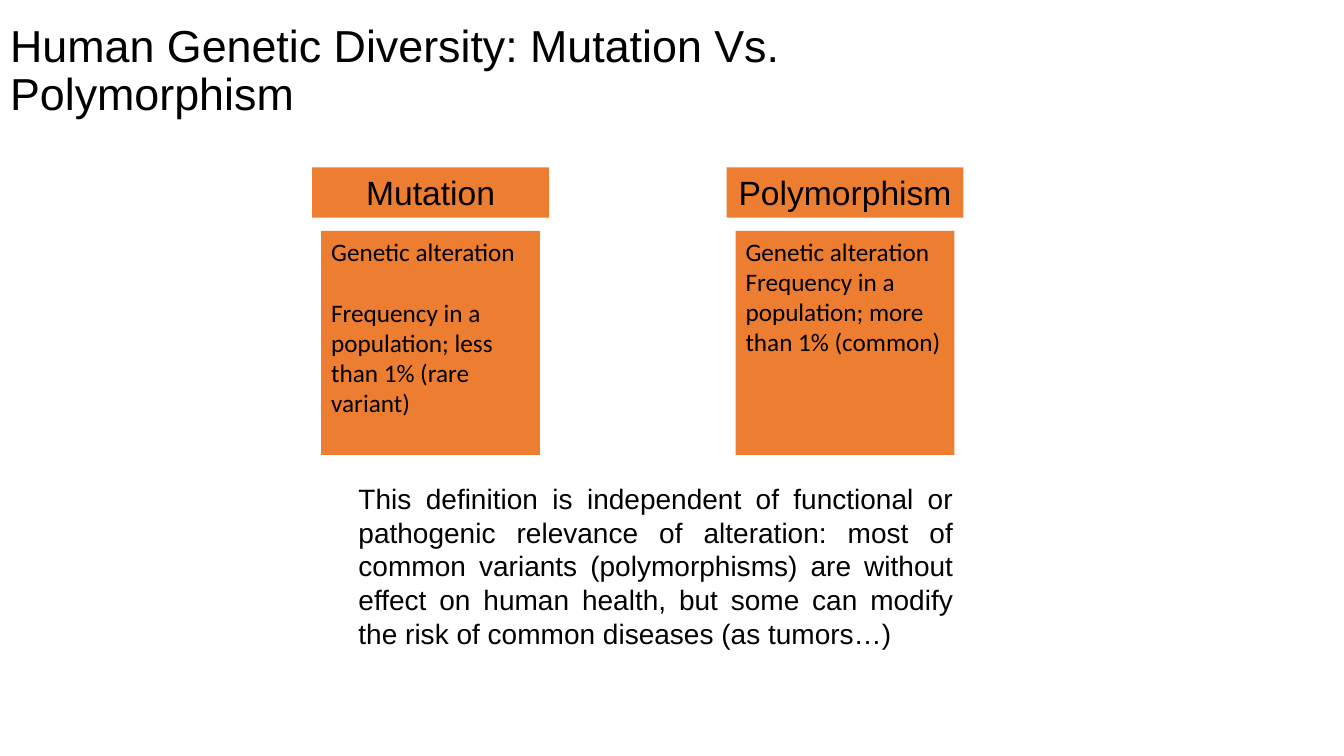
from pptx import Presentation
from pptx.dml.color import RGBColor
from pptx.enum.shapes import MSO_SHAPE
from pptx.enum.text import MSO_ANCHOR, MSO_AUTO_SIZE, PP_ALIGN
from pptx.util import Pt

ORANGE = RGBColor(0xED, 0x7D, 0x31)
BLACK = RGBColor(0, 0, 0)


def write(sp, *lines, size, font="Arial", align=PP_ALIGN.LEFT,
          anchor=MSO_ANCHOR.TOP, spacing=None, gap=0):
    """Fill a shape with one paragraph per line, gap points apart."""
    tf = sp.text_frame
    tf.word_wrap = True
    tf.auto_size = MSO_AUTO_SIZE.NONE
    tf.vertical_anchor = anchor
    for i, line in enumerate(lines):
        p = tf.add_paragraph() if i else tf.paragraphs[0]
        p.alignment = align
        p.line_spacing = spacing
        p.space_before = Pt(gap if i else 0)
        r = p.add_run()
        r.text = line
        r.font.size = Pt(size)
        r.font.name = font
        r.font.color.rgb = BLACK


def add_box(s, left, top, width, height):
    sp = s.shapes.add_shape(MSO_SHAPE.RECTANGLE, Pt(left), Pt(top), Pt(width), Pt(height))
    sp.shadow.inherit = False
    sp.fill.solid()
    sp.fill.fore_color.rgb = ORANGE
    sp.line.fill.background()
    return sp


prs = Presentation()
prs.slide_width, prs.slide_height = Pt(960), Pt(540)
s = prs.slides.add_slide(prs.slide_layouts[5])

title = s.shapes.title
title.left, title.top, title.width, title.height = Pt(0), Pt(-0.75), Pt(720), Pt(104.4)
write(title, "Human Genetic Diversity: Mutation Vs. Polymorphism",
      size=32, anchor=MSO_ANCHOR.MIDDLE, spacing=0.9)

terms = [
    ("Mutation", "Frequency in a population; less than 1% (rare variant)", 22),
    ("Polymorphism", "Frequency in a population; more than 1% (common)", 0),
]
for i, (term, frequency, gap) in enumerate(terms):
    left = 223 + i * 296
    write(add_box(s, left, 119.5, 169.2, 36), term, size=24, align=PP_ALIGN.CENTER)
    write(add_box(s, left + 6.5, 165, 156.2, 160), "Genetic alteration", frequency,
          size=18, font="Calibri", gap=gap)

note = s.shapes.add_textbox(Pt(249), Pt(340.5), Pt(439.2), Pt(128))
write(note, "This definition is independent of functional or pathogenic relevance of "
      "alteration: most of common variants (polymorphisms) are without effect on human "
      "health, but some can modify the risk of common diseases (as tumors…)",
      size=20, align=PP_ALIGN.JUSTIFY)

prs.save("out.pptx")
